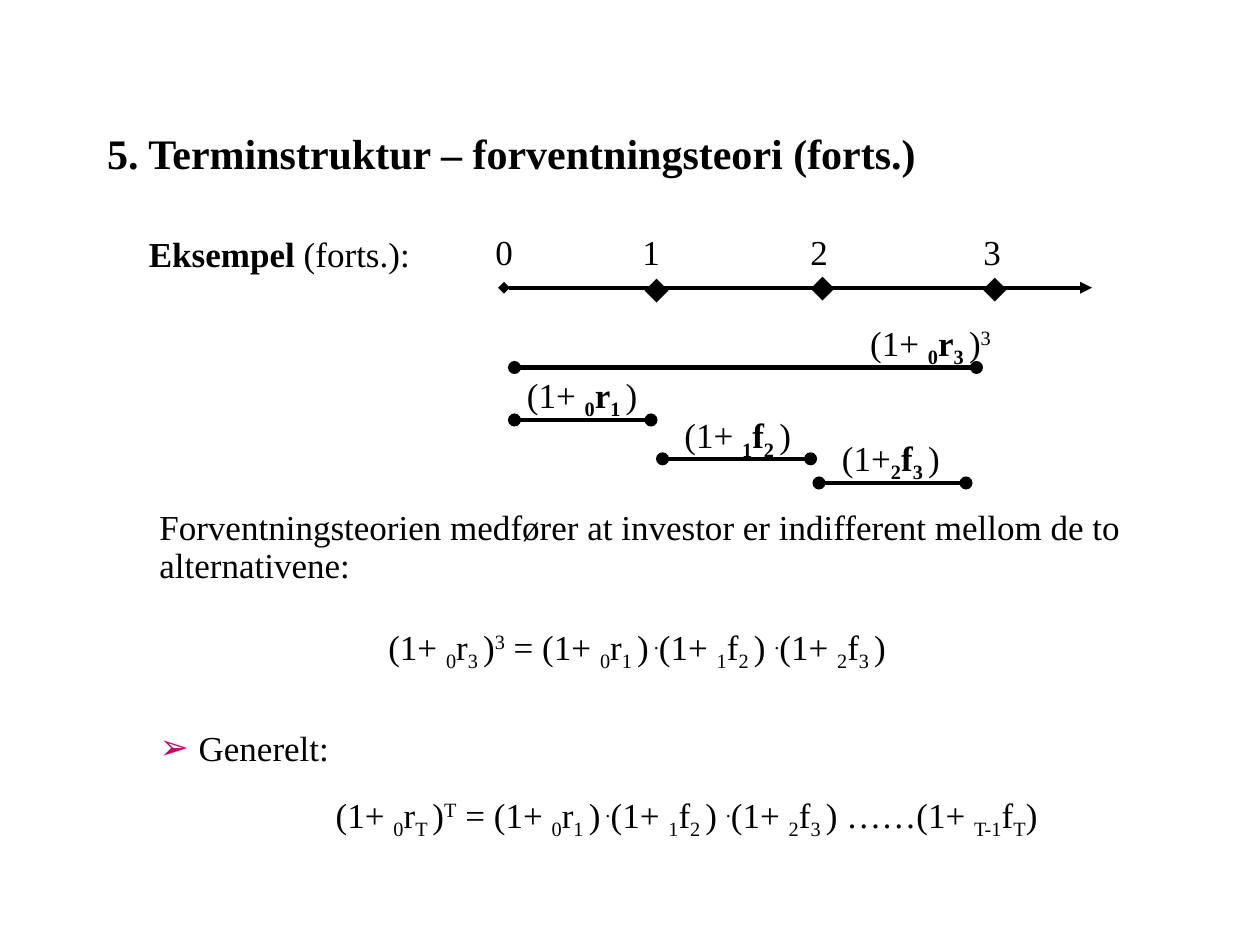
from dataclasses import dataclass

from lxml.etree import SubElement
from pptx import Presentation
from pptx.dml.color import RGBColor
from pptx.enum.shapes import MSO_CONNECTOR
from pptx.enum.text import MSO_ANCHOR, MSO_AUTO_SIZE, PP_ALIGN
from pptx.oxml.ns import qn
from pptx.util import Inches, Pt

COLUMNS, ROWS = 120, 90
TEXT_ROWS = 5


@dataclass(frozen=True)
class Theme:
    ink: RGBColor = RGBColor(0, 0, 0)
    bullet: str = "CC0066"
    font: str = "Times New Roman"
    marker_font: str = "Arial"
    title: int = 24
    body: int = 20
    axis: float = 2.25
    span: float = 2.5


THEME = Theme()
prs = Presentation()
prs.slide_width, prs.slide_height = Inches(10), Inches(7.5)
COLUMN, ROW = prs.slide_width / COLUMNS, prs.slide_height / ROWS


def grid(column, row):
    return round(column * COLUMN), round(row * ROW)


def place(shape, box):
    shape.left, shape.top = grid(*box[:2])
    shape.width, shape.height = grid(*box[2:])


def write(frame, markup, size=THEME.body, font=THEME.font, bold=False,
          align=PP_ALIGN.LEFT, spacing=0.9, wrap=True, anchor=MSO_ANCHOR.TOP,
          bullet=None, hanging=0):
    """Fill a frame; _ toggles subscript, ^ superscript and * bold."""
    frame.word_wrap, frame.auto_size = wrap, MSO_AUTO_SIZE.NONE
    frame.vertical_anchor = anchor
    paragraph = frame.paragraphs[0]
    props = paragraph._p.get_or_add_pPr()
    props.set("marL", str(Inches(hanging)))
    props.set("indent", str(-Inches(hanging)))
    paragraph.alignment = align
    paragraph.line_spacing, paragraph.space_before = spacing, Pt(0)
    if bullet:
        color = SubElement(props, qn("a:buClr"))
        SubElement(color, qn("a:srgbClr"), val=THEME.bullet)
        SubElement(props, qn("a:buChar"), char=bullet)

    def add_run(text, baseline):
        run = paragraph.add_run()
        run.text = text
        run.font.size, run.font.name, run.font.bold = Pt(size), font, bold
        run.font.color.rgb = THEME.ink
        if baseline:
            run._r.get_or_add_rPr().set("baseline", str(baseline))

    shifts = {"_": -25000, "^": 30000}
    pending, baseline = "", 0
    for char in markup:
        if char not in "_^*":
            pending += char
            continue
        if pending:
            add_run(pending, baseline)
            pending = ""
        if char == "*":
            bold = not bold
        else:
            baseline = 0 if baseline else shifts[char]
    if pending:
        add_run(pending, baseline)


def add_text(slide, box, markup, **fmt):
    label = slide.shapes.add_textbox(*grid(*box[:2]), *grid(*box[2:]))
    write(label.text_frame, markup, **fmt)


def add_line(slide, start, end, row, width, head, tail):
    line = slide.shapes.add_connector(
        MSO_CONNECTOR.STRAIGHT, *grid(start, row), *grid(end, row))
    line.line.color.rgb, line.line.width = THEME.ink, Pt(width)
    outline = line.line._get_or_add_ln()
    SubElement(outline, qn("a:headEnd"), type=head)
    SubElement(outline, qn("a:tailEnd"), type=tail)
    SubElement(line._element.spPr, qn("a:effectLst"))


def add_heading(slide, box):
    place(slide.shapes.title, box)
    write(slide.shapes.title.text_frame,
          "5. Terminstruktur – forventningsteori (forts.)", size=THEME.title,
          bold=True, spacing=1, anchor=MSO_ANCHOR.MIDDLE, hanging=0.38)


def add_timeline(slide, box):
    left, top, width, _ = box
    add_line(slide, left, left + width, top + 6, THEME.axis, "diamond", "triangle")
    # Year numbers
    for year, offset in enumerate((-2, 12, 28)):
        add_text(slide, (left + offset, top, 6, TEXT_ROWS), str(year), spacing=1)
    add_text(slide, (left + 41, top, 11, TEXT_ROWS), "3", spacing=1,
             align=PP_ALIGN.CENTER)
    # Year markers
    for offset, drop in ((12.2, 3.3), (28, 3.1), (44.4, 3.2)):
        add_text(slide, (left + offset, top + drop, 4, TEXT_ROWS), "⬥",
                 font=THEME.marker_font, spacing=1)


def add_return_spans(slide, box):
    left, top = box[:2]
    # Start, end and row of each span; column and row of its label
    spans = (
        (0, 44, 5, 32.7, 0, "(1+ *_0_r_3 _*)^3^", 1),
        (0, 13, 10, 0, 5, "(1+ *_0_r_1 _*)", 0.9),
        (14.1, 28.2, 13.7, 15, 8.9, "(1+ *_1_f_2 _*)", 0.9),
        (29, 43, 16, 30, 11, "(1+*_2_f_3 _*)", 0.9),
    )
    for start, end, row, label_column, label_row, factor, spacing in spans:
        add_line(slide, left + start, left + end, top + row, THEME.span,
                 "oval", "oval")
        add_text(slide, (left + label_column, top + label_row, 14, TEXT_ROWS),
                 factor, spacing=spacing, wrap=False)


def add_theory(slide, box):
    left, top, width, _ = box
    factors = "(1+ _0_r_1 _)^ .^(1+ _1_f_2 _) ^.^(1+ _2_f_3 _)"
    add_text(slide, (left, top, width, 8.4),
             "Forventningsteorien medfører at investor er indifferent "
             "mellom de to alternativene:")
    add_text(slide, (left + 21.8, top + 11, 53, TEXT_ROWS),
             f"(1+ _0_r_3 _)^3^ = {factors}")
    # General case
    general = slide.placeholders[1]
    place(general, (left, top + 21, 19, TEXT_ROWS))
    write(general.text_frame, "Generelt:", bullet="➢", hanging=0.31)
    add_text(slide, (left + 16.8, top + 27, 73, TEXT_ROWS),
             f"(1+ _0_r_T _)^T^ = {factors} ……(1+ _T-1_f_T_)")


def main():
    slide = prs.slides.add_slide(prs.slide_layouts[1])
    add_heading(slide, (9, 11, 97, 7))
    add_text(slide, (13, 22, 97, TEXT_ROWS), "*Eksempel* (forts.):")
    add_timeline(slide, (48, 21.4, 56, 8))
    add_return_spans(slide, (49, 30, 44, 16))
    add_theory(slide, (14, 48, 97, 32))
    prs.save("out.pptx")


if __name__ == "__main__":
    main()
